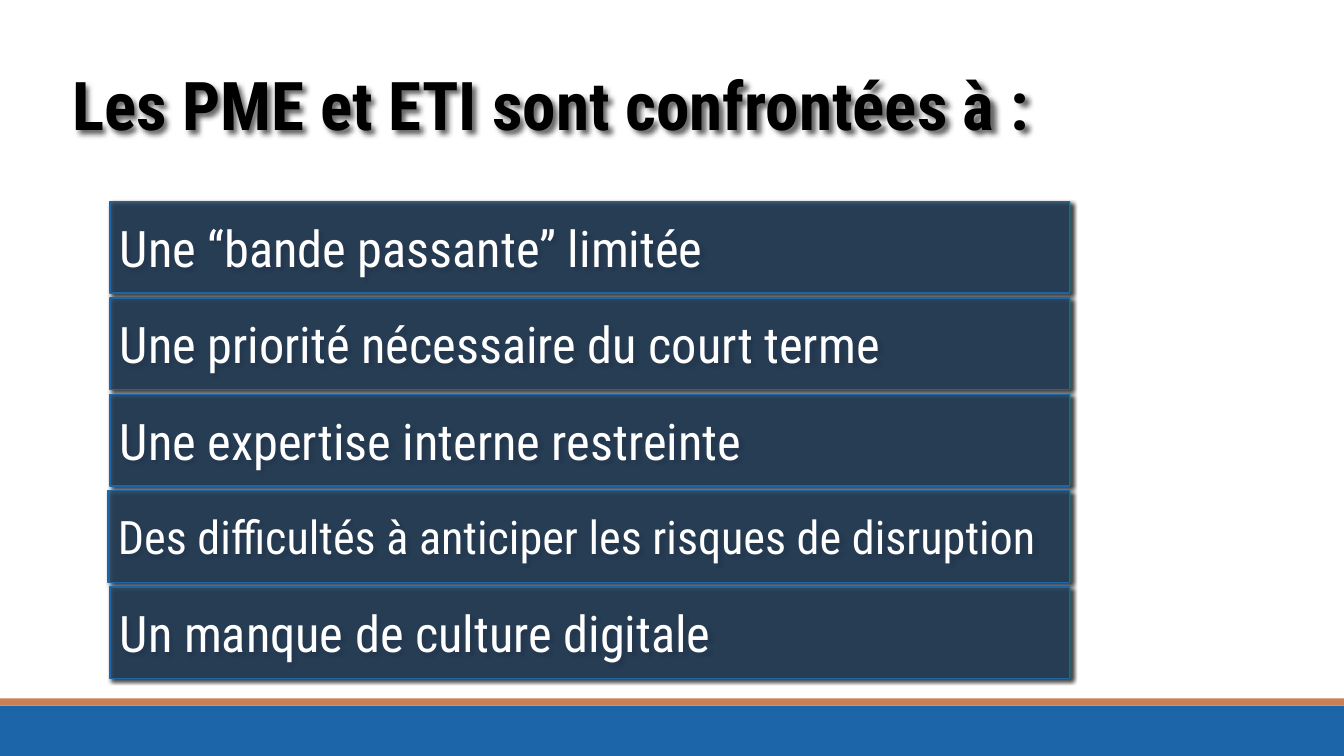
from dataclasses import dataclass

from lxml import etree
from pptx import Presentation
from pptx import util as u
from pptx.dml.color import RGBColor
from pptx.enum import shapes, text
from pptx.oxml.ns import qn


@dataclass(frozen=True)
class Theme:
    """Colours, font and type sizes of the slide."""
    font: str = "Roboto Condensed"
    blue: str = "1C65A8"
    copper: str = "CB7F55"
    teal: str = "28CCE0"
    navy: str = "27304E"
    white: str = "FFFFFF"
    black: str = "000000"
    title_size: int = 48
    band_size: int = 36
    long_band_size: int = 33


THEME = Theme()
WIDTH, HEIGHT = 33.87, 19.05
TITLE = "Les PME et ETI sont confrontées à :"
CHALLENGES = [
    ("Une “bande passante” limitée", THEME.band_size),
    ("Une priorité nécessaire du court terme", THEME.band_size),
    ("Une expertise interne restreinte", THEME.band_size),
    ("Des difficultés à anticiper les risques de disruption", THEME.long_band_size),
    ("Un manque de culture digitale", THEME.band_size),
]


def add_shadow(shape, blur=3, distance=2):
    """Give a shape a soft black shadow towards the lower right."""
    shape.shadow.inherit = False
    effects = shape.element.spPr.find(qn("a:effectLst"))
    shadow = etree.SubElement(
        effects, qn("a:outerShdw"), blurRad=str(u.Pt(blur)), dist=str(u.Pt(distance)),
        dir="2700000", algn="tl", rotWithShape="0")
    colour = etree.SubElement(shadow, qn("a:srgbClr"), val=THEME.black)
    etree.SubElement(colour, qn("a:alpha"), val="60000")


def add_bar(slide, box, colour, opacity=100):
    """Add a plain rectangle in a box of left, top, width, height in cm."""
    bar = slide.shapes.add_shape(shapes.MSO_SHAPE.RECTANGLE, *map(u.Cm, box))
    bar.shadow.inherit = False
    bar.line.fill.background()
    bar.fill.solid()
    bar.fill.fore_color.rgb = RGBColor.from_string(colour)
    if opacity < 100:
        fill = bar.element.spPr.find(qn("a:solidFill"))
        etree.SubElement(fill[0], qn("a:alpha"), val=str(opacity * 1000))
    return bar


def style_text(paragraph, wording, size, colour, bold=False):
    """Write one paragraph in the theme font, set to the left."""
    paragraph.text = wording
    paragraph.alignment = text.PP_ALIGN.LEFT
    paragraph.font.name = THEME.font
    paragraph.font.size = u.Pt(size)
    paragraph.font.bold = bold
    paragraph.font.color.rgb = RGBColor.from_string(colour)


def add_footer(slide, box):
    """Fill the box with a blue bar under a thin copper strip."""
    left, top, width, height = box
    strip = 0.18
    add_bar(slide, (left, top + strip, width, height - strip), THEME.blue)
    add_bar(slide, (left, top, width, strip), THEME.copper)


def add_title(slide, box):
    """Add the bold shadowed title."""
    title = slide.shapes.add_textbox(*map(u.Cm, box))
    title.text_frame.word_wrap = True
    heading = title.text_frame.paragraphs[0]
    style_text(heading, TITLE, THEME.title_size, THEME.black, bold=True)
    heading._p.get_or_add_pPr().set("marL", str(u.Cm(0.51)))
    add_shadow(title, blur=4, distance=3)


def add_challenges(slide, box):
    """Stack the challenge bands in the box, each over a teal underlay."""
    left, top, width, height = box
    band_height = 2.31
    pitch = (height - band_height) / (len(CHALLENGES) - 1)
    tops = [top + row * pitch for row in range(len(CHALLENGES))]
    for band_top in tops:
        underlay = add_bar(slide, (left, band_top, width, band_height), THEME.teal, 60)
        add_shadow(underlay)
    for band_top, (wording, size) in zip(tops, CHALLENGES):
        outdent = 0.05 if size == THEME.long_band_size else 0
        band_box = (left - outdent, band_top, width - 0.05 + outdent, band_height)
        band = add_bar(slide, band_box, THEME.navy, 70)
        band.line.color.rgb = RGBColor.from_string(THEME.blue)
        band.line.width = u.Pt(1)
        add_shadow(band)
        band.text_frame.word_wrap = True
        band.text_frame.vertical_anchor = text.MSO_ANCHOR.MIDDLE
        style_text(band.text_frame.paragraphs[0], wording, size, THEME.white)


def main():
    """Build the slide and save it."""
    deck = Presentation()
    deck.slide_width, deck.slide_height = u.Cm(WIDTH), u.Cm(HEIGHT)
    slide = deck.slides.add_slide(deck.slide_layouts[6])
    add_footer(slide, (0, 17.6, WIDTH, HEIGHT - 17.6))
    add_challenges(slide, (2.77, 5.08, 24.23, 12.02))
    add_title(slide, (1.07, 1.47, 31.57, 2.31))
    deck.save("out.pptx")


if __name__ == "__main__":
    main()
